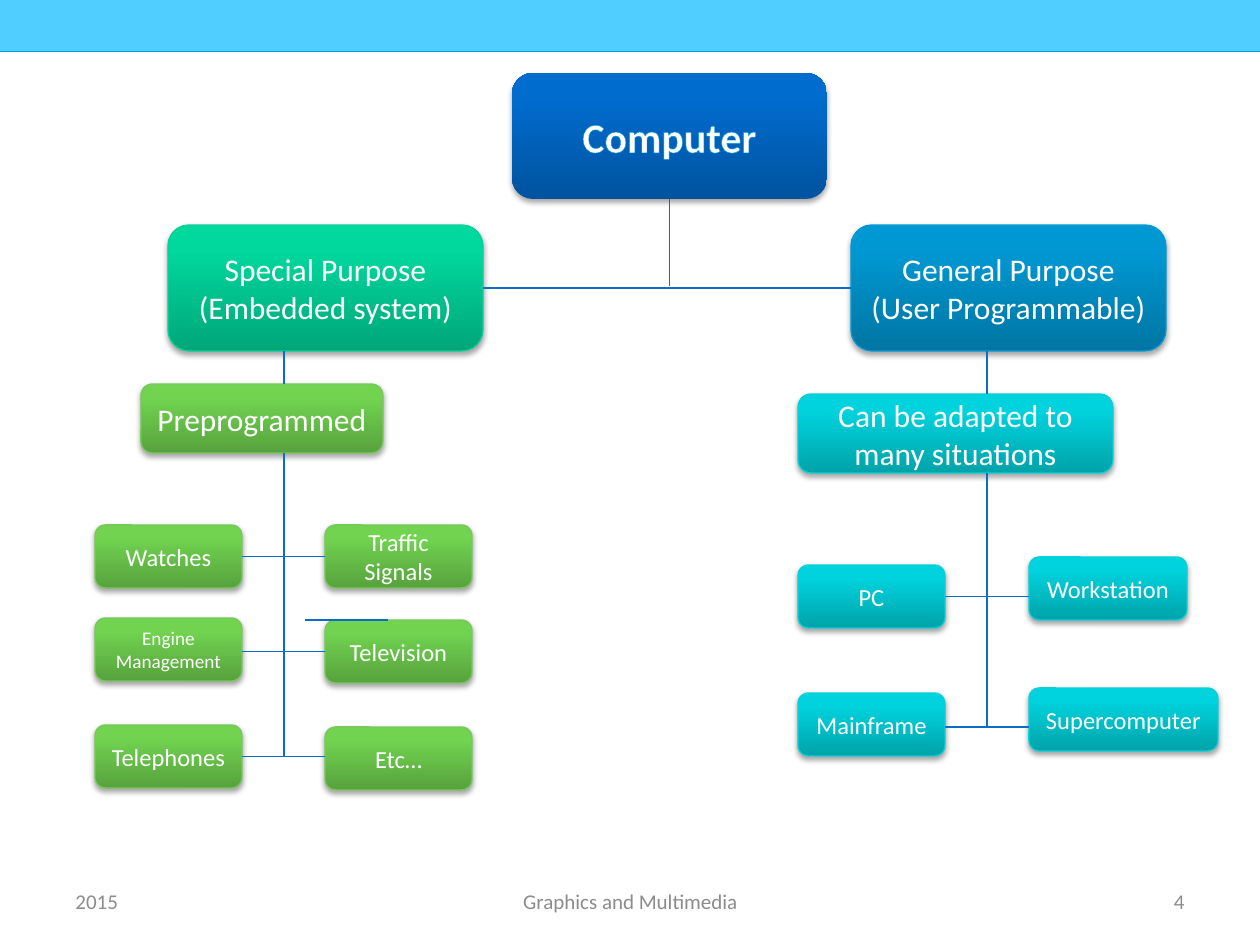
from lxml import etree
from pptx import Presentation
from pptx.dml.color import RGBColor
from pptx.enum.shapes import MSO_CONNECTOR, MSO_SHAPE
from pptx.enum.text import MSO_ANCHOR, PP_ALIGN
from pptx.oxml import parse_xml
from pptx.oxml.ns import nsdecls, qn
from pptx.util import Pt

PX = 914400 / 126
STRAIGHT = MSO_CONNECTOR.STRAIGHT
RECT = MSO_SHAPE.RECTANGLE
ROUNDED = MSO_SHAPE.ROUNDED_RECTANGLE
PROCESS = MSO_SHAPE.FLOWCHART_ALTERNATE_PROCESS
MIDDLE = MSO_ANCHOR.MIDDLE
LEFT, CENTER, RIGHT = PP_ALIGN.LEFT, PP_ALIGN.CENTER, PP_ALIGN.RIGHT
BOTTOM_SIDE, LEFT_SIDE, RIGHT_SIDE = 2, 1, 3

COLORS = {
    "band": "4FCEFF", "band_edge": "009DD9", "connector": "0A6DC6",
    "text": "FFFFFF", "footer": "8C8C8C",
    "blue_dark": "00539F", "blue_light": "006CCE",
    "sky_dark": "0075A2", "sky_light": "0098D2", "sky_line": "009AD4",
    "mint_dark": "00A679", "mint_light": "00D89D", "mint_line": "0BCF9A",
    "green_dark": "57A23D", "green_light": "71D350", "green_line": "78C85D",
    "teal_dark": "00A3AA", "teal_light": "00D3DD", "teal_line": "06D0D9",
}
SHADOW = (
    f'<a:effectLst {nsdecls("a")}><a:outerShdw blurRad="40000" dist="23000" '
    'dir="5400000" rotWithShape="0"><a:srgbClr val="000000">'
    '<a:alpha val="35000"/></a:srgbClr></a:outerShdw></a:effectLst>'
)
TEXT_OUTLINE = (
    f'<a:ln {nsdecls("a")} w="6600"><a:solidFill>'
    f'<a:srgbClr val="{COLORS["band_edge"]}"/></a:solidFill></a:ln>'
)


def emu(*lengths):
    return [round(length * PX) for length in lengths]


def write(shape, text, size, color, align):
    frame = shape.text_frame
    frame.word_wrap = True
    frame.vertical_anchor = MIDDLE
    frame.text = text
    font_format = {"name": "Calibri", "size": Pt(size)}
    for paragraph in frame.paragraphs:
        paragraph.alignment = align
        for run in paragraph.runs:
            for name, value in font_format.items():
                setattr(run.font, name, value)
            run.font.color.rgb = RGBColor.from_string(COLORS[color])


prs = Presentation()
prs.slide_width, prs.slide_height = emu(1260, 945)
slide = prs.slides.add_slide(prs.slide_layouts[6])
shapes = slide.shapes

# Top band with a thin darker edge below it
for color, height in (("band_edge", 52), ("band", 51)):
    band = shapes.add_shape(RECT, *emu(0, 0, 1260, height))
    band.shadow.inherit = False
    band.fill.solid()
    band.fill.fore_color.rgb = RGBColor.from_string(COLORS[color])
    band.line.fill.background()

# Footer: date, course, slide number
for text, x, width, align in (
    ("2015", 63, 294, LEFT),
    ("Graphics and Multimedia", 431, 399, CENTER),
    ("4", 903, 294, RIGHT),
):
    footer = shapes.add_textbox(*emu(x, 876, width, 50))
    write(footer, text, 12, "footer", align)

# Boxes: key, text, preset, palette, x, y, width, height, text size
BOXES = [
    ("computer", "Computer", ROUNDED, "blue", 512, 73, 315, 126, 24),
    ("general", "General Purpose\n(User Programmable)", ROUNDED, "sky",
     851, 225, 315, 126, 18),
    ("special", "Special Purpose\n(Embedded system)", ROUNDED, "mint",
     168, 225, 315, 126, 18),
    ("preprogrammed", "Preprogrammed", PROCESS, "green", 141, 384, 242, 69, 18),
    ("watches", "Watches", PROCESS, "green", 95, 525, 147, 63, 14),
    ("traffic", "Traffic Signals", PROCESS, "green", 325, 525, 147, 63, 14),
    ("etc", "Etc…", PROCESS, "green", 325, 727, 147, 63, 14),
    ("television", "Television", PROCESS, "green", 325, 620, 147, 63, 14),
    ("telephones", "Telephones", PROCESS, "green", 95, 725, 147, 63, 14),
    ("engine", "Engine Management", PROCESS, "green", 95, 618, 147, 63, 11),
    ("supercomputer", "Supercomputer", PROCESS, "teal", 1029, 688, 189, 63, 14),
    ("workstation", "Workstation", PROCESS, "teal", 1029, 557, 158, 63, 14),
    ("mainframe", "Mainframe", PROCESS, "teal", 798, 693, 147, 63, 14),
    ("pc", "PC", PROCESS, "teal", 798, 565, 147, 63, 14),
    ("adapted", "Can be adapted to many situations", PROCESS, "teal",
     798, 394, 315, 79, 18),
]
boxes = {}
for key, text, preset, palette, x, y, width, height, size in BOXES:
    box = shapes.add_shape(preset, *emu(x, y, width, height))
    box.fill.gradient()
    box.fill.gradient_angle = 90
    stops = ((0, "dark"), (0.8, "light"))
    for stop, (position, shade) in zip(box.fill.gradient_stops, stops):
        stop.position = position
        stop.color.rgb = RGBColor.from_string(COLORS[f"{palette}_{shade}"])
    if f"{palette}_line" in COLORS:
        box.line.color.rgb = RGBColor.from_string(COLORS[f"{palette}_line"])
        box.line.width = Pt(0.75)
    else:
        box.line.fill.background()
    box._element.spPr.append(parse_xml(SHADOW))
    write(box, text, size, "text", CENTER)
    boxes[key] = box

# The root label is bold with a thin outline
root_font = boxes["computer"].text_frame.paragraphs[0].runs[0].font
root_font.bold = True
root_font._element.insert(0, parse_xml(TEXT_OUTLINE))

# Connectors: x1, y1, x2, y2, box joined at the start, box joined at the end
LINES = [
    (669, 199, 669, 286, "computer", None),
    (483, 288, 851, 288, "special", "general"),
    (284, 351, 284, 384, None, None),
    (284, 453, 284, 757, None, None),
    (242, 557, 325, 557, "watches", "traffic"),
    (242, 651, 325, 651, None, "television"),
    (242, 756, 325, 756, "telephones", None),
    (945, 596, 1029, 596, "pc", None),
    (945, 727, 1029, 727, None, None),
    (305, 620, 388, 620, None, None),
    (987, 351, 987, 394, None, None),
    (987, 473, 987, 727, None, None),
]
for x1, y1, x2, y2, start, end in LINES:
    line = shapes.add_connector(STRAIGHT, *emu(x1, y1, x2, y2))
    line.line.color.rgb = RGBColor.from_string(COLORS["connector"])
    line.line.width = Pt(0.75)
    etree.SubElement(line._element.spPr, qn("a:effectLst"))
    vertical = x1 == x2
    if start:
        line.begin_connect(boxes[start], BOTTOM_SIDE if vertical else RIGHT_SIDE)
    if end:
        line.end_connect(boxes[end], LEFT_SIDE)
    # A free end stays level with the joined one
    if vertical:
        line.end_x = line.begin_x
    elif end:
        line.begin_y = line.end_y
    else:
        line.end_y = line.begin_y

prs.save("out.pptx")
